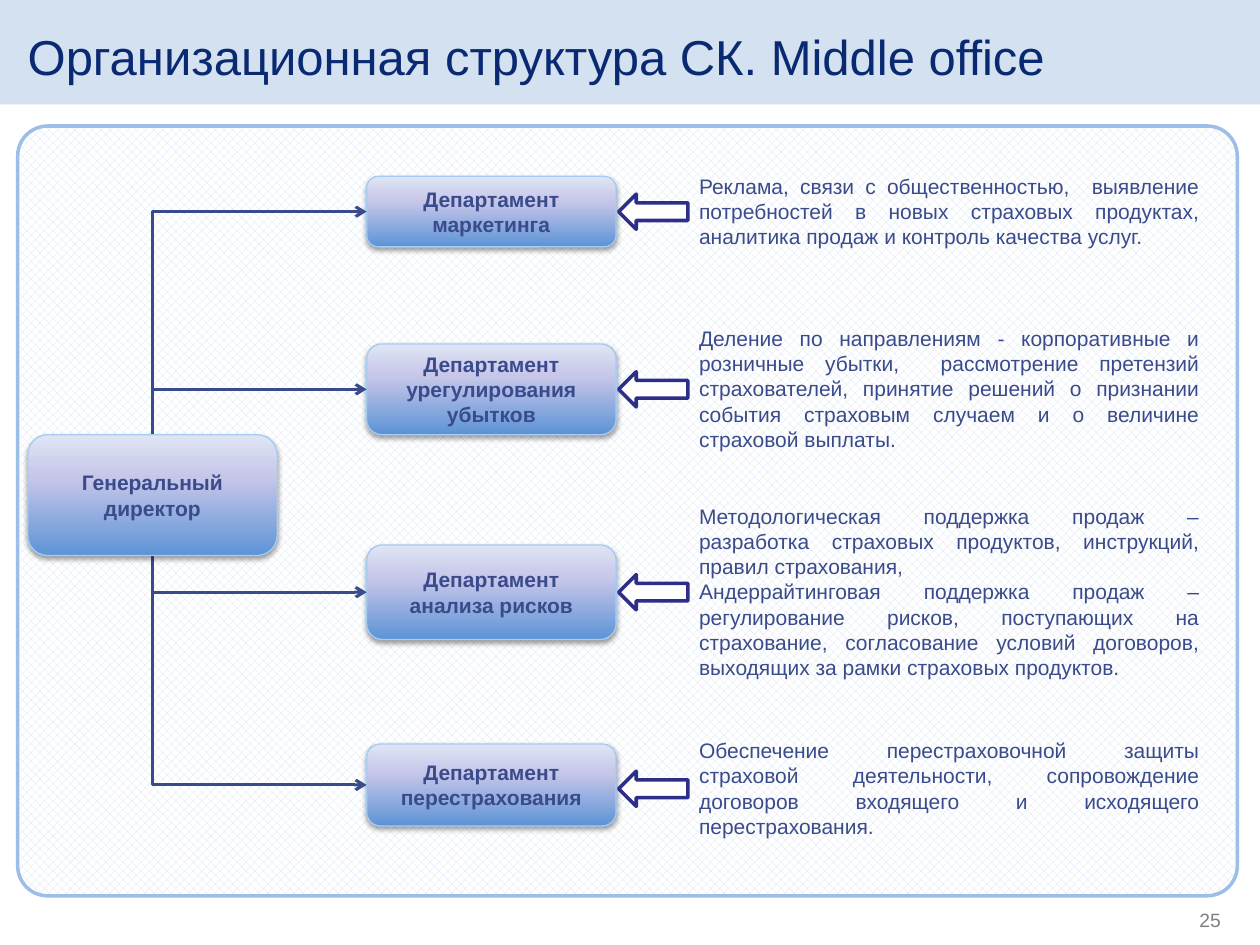
from lxml import etree
from pptx import Presentation
from pptx.dml.color import RGBColor
from pptx.enum.dml import MSO_PATTERN
from pptx.enum.shapes import MSO_CONNECTOR, MSO_SHAPE
from pptx.enum.text import MSO_ANCHOR, PP_ALIGN
from pptx.oxml import parse_xml
from pptx.oxml.ns import nsdecls, qn
from pptx.util import Inches, Pt

RECT, ROUNDED, LEFT_ARROW = MSO_SHAPE.RECTANGLE, MSO_SHAPE.ROUNDED_RECTANGLE, MSO_SHAPE.LEFT_ARROW
STRAIGHT, ELBOW = MSO_CONNECTOR.STRAIGHT, MSO_CONNECTOR.ELBOW
LEFT, CENTER, RIGHT, JUSTIFY = PP_ALIGN.LEFT, PP_ALIGN.CENTER, PP_ALIGN.RIGHT, PP_ALIGN.JUSTIFY
TOP, MIDDLE = MSO_ANCHOR.TOP, MSO_ANCHOR.MIDDLE

# Content
TITLE = "Организационная структура СК. Middle office"
DIRECTOR = "Генеральный директор"
PAGE_NUMBER = "25"
# department, box centre, box height, duties, duties centre, duties height
DEPARTMENTS = [
    ("Департамент маркетинга", 1.68, 0.56,
     "Реклама, связи с общественностью,  выявление потребностей в новых страховых "
     "продуктах, аналитика продаж и контроль качества услуг.", 1.68, 0.71),
    ("Департамент урегулирования убытков", 3.09, 0.72,
     "Деление по направлениям - корпоративные и розничные убытки,  рассмотрение "
     "претензий страхователей, принятие решений о признании события страховым "
     "случаем и о величине страховой выплаты.", 3.09, 1.11),
    ("Департамент анализа рисков", 4.7, 0.75,
     "Методологическая поддержка продаж – разработка страховых продуктов, "
     "инструкций, правил страхования,\n"
     "Андеррайтинговая поддержка продаж – регулирование рисков, поступающих на "
     "страхование, согласование условий договоров, выходящих за рамки страховых "
     "продуктов.", 4.7, 1.51),
    ("Департамент перестрахования", 6.23, 0.65,
     "Обеспечение перестраховочной защиты страховой деятельности, сопровождение "
     "договоров входящего и исходящего перестрахования.", 6.26, 0.91),
]

# Layout and colours
BOX_WIDTH = 1.98
DIRECTOR_LEFT, DEPARTMENT_LEFT, ARROW_LEFT, DUTIES_LEFT = 0.22, 2.91, 4.91, 5.45
DIRECTOR_CENTER, DIRECTOR_HEIGHT = 3.93, 0.96
TRUNK = DIRECTOR_LEFT + BOX_WIDTH / 2
INK, PALE, WHITE = "3A4B8C", "D4E1F0", "FFFFFF"
GRADIENT = [(0, "5C93D6"), (64, "C6C6E9"), (100, "DFE5F4")]


def color(value):
    return RGBColor.from_string(value)


def write(shape, text, size=12, ink=INK, align=CENTER, anchor=MIDDLE, bold=False, inset=None):
    frame = shape.text_frame
    frame.text = text
    frame.word_wrap = True
    frame.vertical_anchor = anchor
    if inset is not None:
        frame.margin_left = frame.margin_right = Inches(inset)
        frame.margin_top = frame.margin_bottom = Inches(inset)
    for para in frame.paragraphs:
        para.alignment = align
        for span in para.runs:
            span.font.name = "Arial"
            span.font.size = Pt(size)
            span.font.bold = bold
            span.font.color.rgb = color(ink)


def add_shape(page, kind, left, top, width, height, fill=WHITE, line=None, weight=1):
    shape = page.shapes.add_shape(kind, *map(Inches, (left, top, width, height)))
    shape.shadow.inherit = False
    shape.fill.solid()
    shape.fill.fore_color.rgb = color(fill)
    if line:
        shape.line.color.rgb = color(line)
        shape.line.width = Pt(weight)
    else:
        shape.line.fill.background()
    return shape


def add_text(page, left, top, width, height, text, **style):
    write(page.shapes.add_textbox(*map(Inches, (left, top, width, height))), text, **style)


def add_unit(page, left, center, height, text):
    """Gradient box with a soft shadow, centred on a row."""
    box = add_shape(page, ROUNDED, left, center - height / 2, BOX_WIDTH, height,
                    line="A5CCF5", weight=0.75)
    properties = box._element.spPr
    stops = "".join(f'<a:gs pos="{share * 1000}"><a:srgbClr val="{tint}"/></a:gs>'
                    for share, tint in GRADIENT)
    properties.replace(properties.find(qn("a:solidFill")), parse_xml(
        f'<a:gradFill {nsdecls("a")} rotWithShape="1"><a:gsLst>{stops}</a:gsLst>'
        '<a:lin ang="16200000" scaled="0"/></a:gradFill>'))
    properties.replace(properties.find(qn("a:effectLst")), parse_xml(
        f'<a:effectLst {nsdecls("a")}><a:outerShdw blurRad="39370" dist="20320" dir="5400000" '
        'rotWithShape="0"><a:srgbClr val="000000"><a:alpha val="38000"/></a:srgbClr>'
        '</a:outerShdw></a:effectLst>'))
    write(box, text, bold=True)


def add_link(page, kind, *ends):
    link = page.shapes.add_connector(kind, *map(Inches, ends))
    link.line.color.rgb = color(INK)
    link.line.width = Pt(1.75)
    etree.SubElement(link.line._get_or_add_ln(), qn("a:tailEnd"), type="arrow")
    etree.SubElement(link._element.spPr, qn("a:effectLst"))
    return link


def add_corner_link(page, start, end):
    """Runs vertically from the director, then right to a department."""
    middle_x, middle_y = (TRUNK + DEPARTMENT_LEFT) / 2, (start + end) / 2
    half_width, half_height = (end - start) / 2, (DEPARTMENT_LEFT - TRUNK) / 2
    # The unrotated frame has its sides swapped
    reach = abs(half_width)
    rise = half_height if half_width > 0 else -half_height
    link = add_link(page, ELBOW, middle_x + reach, middle_y - rise,
                    middle_x - reach, middle_y + rise)
    properties = link._element.spPr
    properties.find(qn("a:prstGeom")).set("prst", "bentConnector2")
    properties.find(qn("a:xfrm")).set("rot", "16200000" if half_width > 0 else "5400000")


def main():
    deck = Presentation()
    deck.slide_width, deck.slide_height = Inches(10), Inches(7.5)
    page = deck.slides.add_slide(deck.slide_layouts[5])

    # Header band and patterned panel
    add_shape(page, RECT, 0, 0, 10, 0.83, fill=PALE)
    panel = add_shape(page, ROUNDED, 0.14, 1, 9.68, 6.11, line="9DBEE7", weight=2)
    panel.adjustments[0] = 0.039
    panel.fill.patterned()
    panel.fill.pattern = MSO_PATTERN.PERCENT_50
    panel.fill.fore_color.rgb = color(PALE)
    panel.fill.back_color.rgb = color(WHITE)

    # Title, brought in front of the band
    title = page.shapes.title
    title.left, title.top, title.width, title.height = map(Inches, (0.22, 0.15, 9.17, 0.58))
    write(title, TITLE, size=28, ink="0A2973", align=LEFT, inset=0)
    page.shapes._spTree.append(title._element)

    # Departments with their duties
    for name, center, height, duties, duties_center, duties_height in DEPARTMENTS:
        add_unit(page, DEPARTMENT_LEFT, center, height, name)
        add_text(page, DUTIES_LEFT, duties_center - duties_height / 2, 4.17, duties_height,
                 duties, align=JUSTIFY, anchor=TOP)
        add_shape(page, LEFT_ARROW, ARROW_LEFT, duties_center - 0.14, 0.55, 0.28,
                  line="2D2D8A", weight=2)

    # Links from the director: corners to the outer rows, straight to the inner ones
    centers = [row[1] for row in DEPARTMENTS]
    for center in (centers[0], centers[-1]):
        add_corner_link(page, DIRECTOR_CENTER, center)
    for center in centers[1:-1]:
        add_link(page, STRAIGHT, TRUNK, center, DEPARTMENT_LEFT, center)
    add_unit(page, DIRECTOR_LEFT, DIRECTOR_CENTER, DIRECTOR_HEIGHT, DIRECTOR)

    # Page number
    add_text(page, 7.36, 7.21, 2.33, 0.31, PAGE_NUMBER, size=11, ink="808080",
             align=RIGHT, anchor=TOP, inset=0)
    deck.save("out.pptx")


if __name__ == "__main__":
    main()
